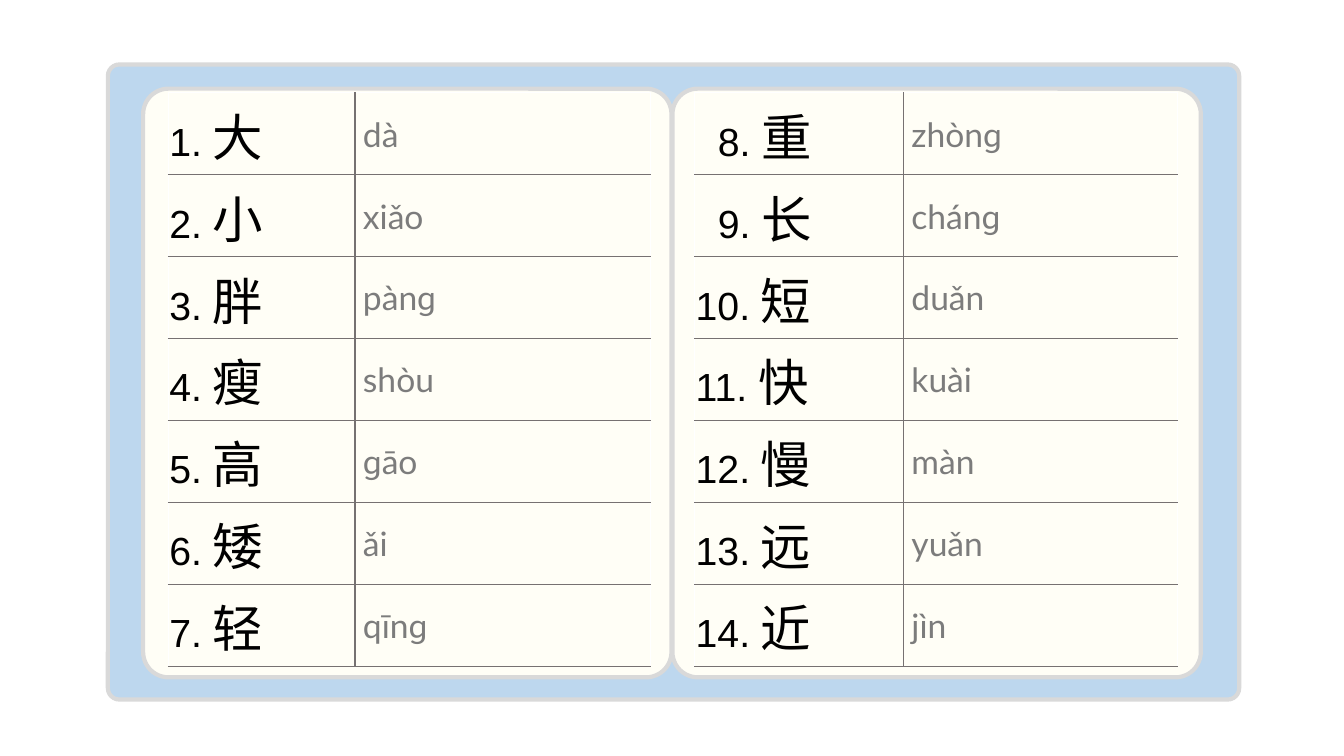
from lxml.etree import SubElement
from pptx import Presentation
from pptx.dml.color import RGBColor
from pptx.enum.shapes import MSO_SHAPE
from pptx.enum.text import MSO_ANCHOR
from pptx.oxml import parse_xml
from pptx.oxml.ns import nsdecls, qn
from pptx.util import Inches, Pt

BLUE = RGBColor(0xBD, 0xD7, 0xEE)
CREAM = RGBColor(0xFF, 0xFE, 0xF6)
FRAME = RGBColor(0xD9, 0xD9, 0xD9)
RULE = RGBColor(0x76, 0x71, 0x71)
WHITE = RGBColor(0xFF, 0xFF, 0xFF)
BLACK = RGBColor(0, 0, 0)
PINYIN_GRAY = RGBColor(0x7C, 0x7C, 0x7C)

ROW_HEIGHT = 5.69 / 7
WORD_LISTS = [
    (1.67, (1.85, 2.93), 1, [
        ("大", "dà"), ("小", "xiǎo"), ("胖", "pànɡ"), ("瘦", "shòu"),
        ("高", "ɡāo"), ("矮", "ǎi"), ("轻", "qīnɡ")]),
    (6.89, (2.07, 2.72), 8, [
        ("重", "zhònɡ"), ("长", "chánɡ"), ("短", "duǎn"), ("快", "kuài"),
        ("慢", "màn"), ("远", "yuǎn"), ("近", "jìn")]),
]


def add_run(paragraph, text, size, font_name, color):
    run = paragraph.add_run()
    run.text = text
    run.font.size = Pt(size)
    run.font.name = font_name
    run.font.color.rgb = color
    SubElement(run.font._element, qn("a:ea")).set("typeface", font_name)


def format_cell(cell, left_margin, borders):
    cell.vertical_anchor = MSO_ANCHOR.MIDDLE
    cell.margin_left = Inches(left_margin)
    cell.margin_right = cell.margin_top = Inches(0.01)
    cell.margin_bottom = 0
    cell.fill.background()
    properties = cell._tc.get_or_add_tcPr()
    for position, (side, color) in enumerate(borders.items()):
        properties.insert(position, parse_xml(
            f'<a:ln{side} {nsdecls("a")} w="{Pt(1)}"><a:solidFill>'
            f'<a:srgbClr val="{color}"/></a:solidFill></a:ln{side}>'))


presentation = Presentation()
presentation.slide_width = Inches(13.33)
presentation.slide_height = Inches(7.5)
slide = presentation.slides.add_slide(presentation.slide_layouts[6])

book = slide.shapes.add_group_shape()
for left, top, width, height, rounding, color in [
    (1.07, 0.64, 11.22, 6.3, 0.018, BLUE),
    (1.42, 0.88, 5.24, 5.84, 0.048, CREAM),
    (6.67, 0.88, 5.24, 5.84, 0.048, CREAM),
]:
    page = book.shapes.add_shape(
        MSO_SHAPE.ROUNDED_RECTANGLE,
        Inches(left), Inches(top), Inches(width), Inches(height))
    page.adjustments[0] = rounding
    page.shadow.inherit = False
    page.fill.solid()
    page.fill.fore_color.rgb = color
    page.line.color.rgb = FRAME
    page.line.width = Pt(3)

for left, column_widths, first_number, words in WORD_LISTS:
    word_table = slide.shapes.add_table(
        len(words), 2, Inches(left), Inches(0.92),
        Inches(sum(column_widths)), Inches(ROW_HEIGHT * len(words))).table
    word_table.first_row = False
    word_table.horz_banding = False
    for column, width in zip(word_table.columns, column_widths):
        column.width = Inches(width)

    for row, (character, pinyin) in enumerate(words):
        word_table.rows[row].height = Inches(ROW_HEIGHT)
        number = first_number + row
        top_color = RULE if row else WHITE
        indent = 0.23 if number in (8, 9) else 0.01

        character_cell = word_table.cell(row, 0)
        format_cell(character_cell, indent,
                    {"L": WHITE, "R": RULE, "T": top_color, "B": RULE})
        entry = character_cell.text_frame.paragraphs[0]
        add_run(entry, f"{number}. ", 28, "Arial", BLACK)
        add_run(entry, character, 36, "Noto Sans CJK SC", BLACK)

        pinyin_cell = word_table.cell(row, 1)
        format_cell(pinyin_cell, 0.08,
                    {"L": RULE, "R": WHITE, "T": top_color, "B": RULE})
        add_run(pinyin_cell.text_frame.paragraphs[0], pinyin, 24, "Lato", PINYIN_GRAY)

presentation.save("out.pptx")
